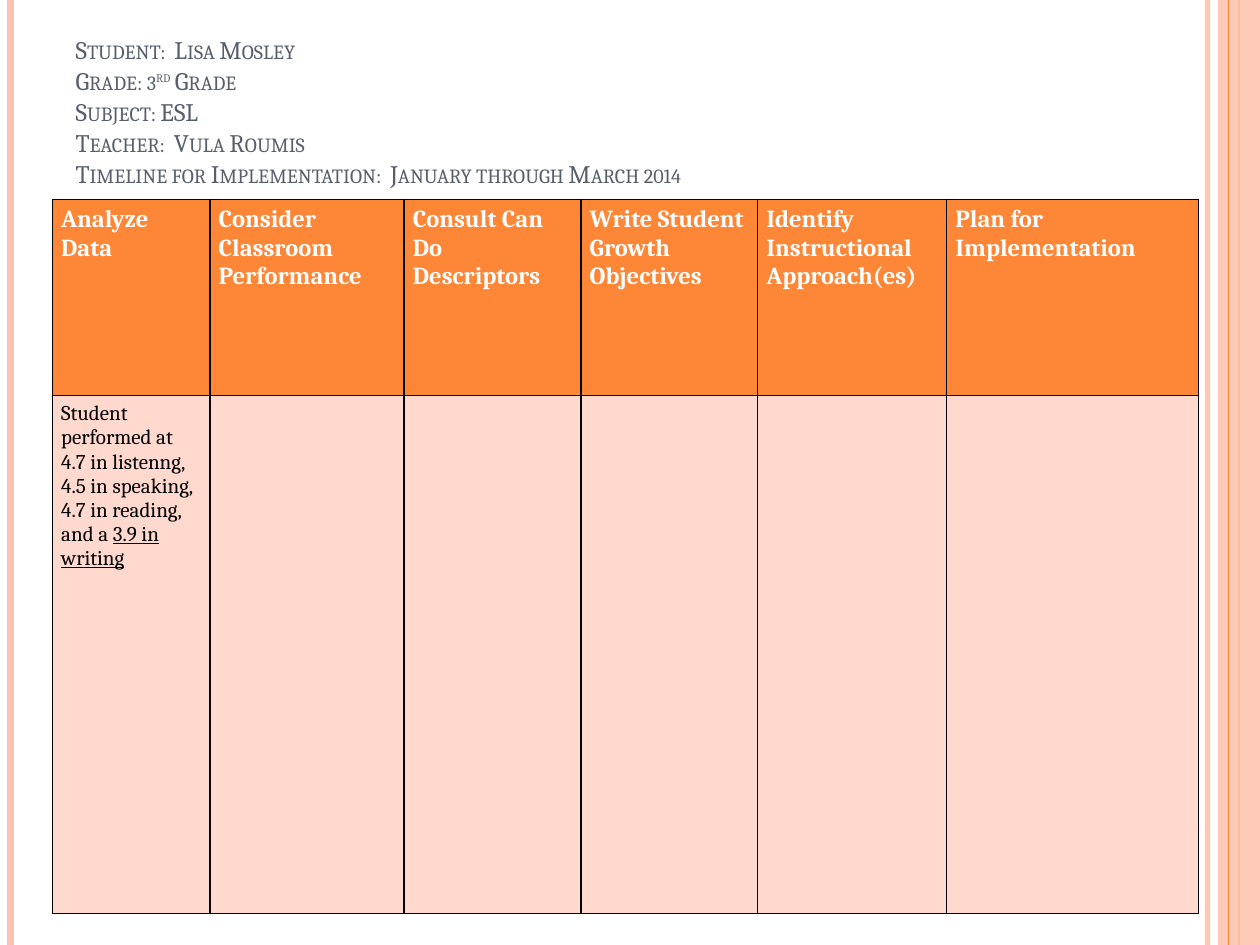
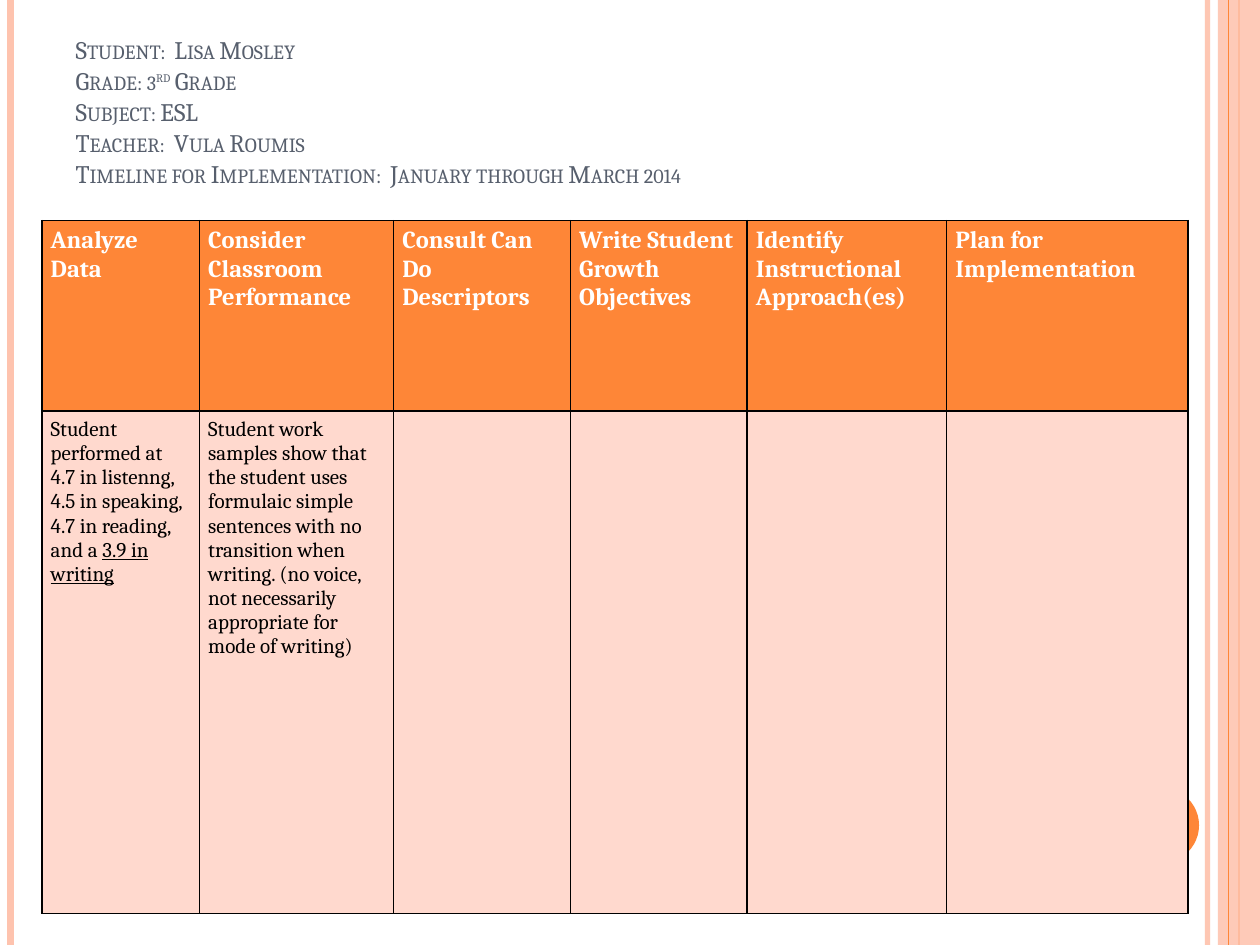
from lxml import etree
from pptx import Presentation
from pptx.dml.color import RGBColor
from pptx.enum.shapes import MSO_CONNECTOR, MSO_SHAPE
from pptx.enum.text import MSO_ANCHOR, MSO_AUTO_SIZE, PP_ALIGN
from pptx.oxml.ns import qn
from pptx.util import Pt

STRAIGHT = MSO_CONNECTOR.STRAIGHT
RECTANGLE, OVAL = MSO_SHAPE.RECTANGLE, MSO_SHAPE.OVAL
BOTTOM, LEFT, NO_FIT = MSO_ANCHOR.BOTTOM, PP_ALIGN.LEFT, MSO_AUTO_SIZE.NONE

WIDTH, HEIGHT = 720, 540
FONT = "Cambria"
ORANGE, PEACH, PINK = "FE8637", "FEC3AE", "FFD9CE"
SLATE, BLACK, WHITE = "575F6D", "000000", "FFFFFF"

TITLE_LINES = [
    ["Student:  Lisa Mosley"],
    ["Grade: 3", "rd", " Grade"],
    ["Subject: ESL"],
    ["Teacher:  Vula Roumis"],
    ["Timeline for Implementation:  January through March 2014"],
]
HEADERS = [
    "Analyze Data", "Consider Classroom Performance", "Consult Can Do Descriptors",
    "Write Student Growth Objectives", "Identify Instructional Approach(es)",
    "Plan for Implementation",
]
DATA_ANALYSIS = [
    "Student performed at 4.7 in listenng, 4.5 in speaking, 4.7 in reading, and a ",
    "3.9 in writing",
]
CLASSROOM_PERFORMANCE = [
    "Student work samples show that the student uses formulaic simple sentences "
    "with no transition when writing. (no voice, not necessarily appropriate for "
    "mode of writing)",
]
PLANS = [
    {"left": 30, "top": 114, "columns": [90, 111, 101, 101, 108, 144],
     "rows": [112, 296], "findings": [DATA_ANALYSIS]},
    {"left": 24, "top": 126, "columns": [90, 111, 101, 101, 114, 138],
     "rows": [109, 287], "findings": [DATA_ANALYSIS, CLASSROOM_PERFORMANCE]},
]


def color(value):
    return RGBColor.from_string(value)


def set_alpha(element, percent):
    rgb = next(element.iter(qn("a:srgbClr")))
    etree.SubElement(rgb, qn("a:alpha")).set("val", str(percent * 1000))


class PlanDeck:
    def __init__(self):
        self.presentation = Presentation()
        self.presentation.slide_width = Pt(WIDTH)
        self.presentation.slide_height = Pt(HEIGHT)
        self.slide = None

    def add_slide(self):
        self.slide = self.presentation.slides.add_slide(self.presentation.slide_layouts[5])
        self.vertical_line(690, PEACH, 3, 93)
        self.vertical_line(6, PEACH, 4.5)
        self.vertical_line(708, ORANGE, 1.5)
        self.shape(RECTANGLE, 696, 0, 24, HEIGHT, PEACH, 87)
        self.vertical_line(702, ORANGE, 0.75)
        self.shape(OVAL, 642, 450, 43.2, 43.2, ORANGE)

    def vertical_line(self, x, line_color, width, alpha=100):
        line = self.slide.shapes.add_connector(STRAIGHT, Pt(x), 0, Pt(x), Pt(HEIGHT))
        line.line.color.rgb = color(line_color)
        line.line.width = Pt(width)
        properties = line._element.spPr
        if alpha < 100:
            set_alpha(properties, alpha)
        etree.SubElement(properties, qn("a:effectLst"))

    def shape(self, kind, left, top, width, height, fill, alpha=100):
        shape = self.slide.shapes.add_shape(kind, Pt(left), Pt(top), Pt(width), Pt(height))
        shape.shadow.inherit = False
        shape.fill.solid()
        shape.fill.fore_color.rgb = color(fill)
        shape.line.fill.background()
        if alpha < 100:
            set_alpha(shape._element.spPr, alpha)

    def format_paragraph(self, paragraph, size, font_color, bold=False):
        paragraph.alignment = LEFT
        paragraph.font.name = FONT
        paragraph.font.size = Pt(size)
        paragraph.font.bold = bold
        paragraph.font.color.rgb = color(font_color)

    def title(self, lines):
        title = self.slide.shapes.title
        title.left, title.top, title.width, title.height = Pt(36), Pt(21.6), Pt(588), Pt(90)
        frame = title.text_frame
        frame.word_wrap = True
        frame.auto_size = NO_FIT
        frame.vertical_anchor = BOTTOM
        paragraph = frame.paragraphs[0]
        self.format_paragraph(paragraph, 14.4, SLATE)
        paragraph.line_spacing = 1.03
        for index, parts in enumerate(lines):
            if index:
                paragraph.add_line_break()
            for text in parts:
                run = paragraph.add_run()
                run.text = text
                properties = run._r.get_or_add_rPr()
                properties.set("cap", "small")
                if text == "rd":
                    properties.set("baseline", "30000")

    def cell(self, cell, parts, fill, size, font_color, bold):
        cell.margin_left = cell.margin_right = Pt(5)
        properties = cell._tc.get_or_add_tcPr()
        for side in ("a:lnL", "a:lnR", "a:lnT", "a:lnB"):
            border = etree.SubElement(properties, qn(side), w=str(Pt(1)))
            border_fill = etree.SubElement(border, qn("a:solidFill"))
            etree.SubElement(border_fill, qn("a:srgbClr"), val=BLACK)
        cell.fill.solid()
        cell.fill.fore_color.rgb = color(fill)
        paragraph = cell.text_frame.paragraphs[0]
        self.format_paragraph(paragraph, size, font_color, bold)
        for index, text in enumerate(parts):
            run = paragraph.add_run()
            run.text = text
            if index:
                run.font.underline = True

    def plan_table(self, left, top, columns, rows, findings):
        table = self.slide.shapes.add_table(
            len(rows), len(columns), Pt(left), Pt(top), Pt(sum(columns)), Pt(sum(rows))).table
        for row, height in zip(table.rows, rows):
            row.height = Pt(height)
        for index, width in enumerate(columns):
            table.columns[index].width = Pt(width)
            finding = findings[index] if index < len(findings) else []
            self.cell(table.cell(0, index), [HEADERS[index]], ORANGE, 14, WHITE, True)
            self.cell(table.cell(1, index), finding, PINK, 12, BLACK, False)


def main():
    deck = PlanDeck()
    for plan in PLANS:
        deck.add_slide()
        deck.title(TITLE_LINES)
        deck.plan_table(**plan)
    deck.presentation.save("out.pptx")


if __name__ == "__main__":
    main()
